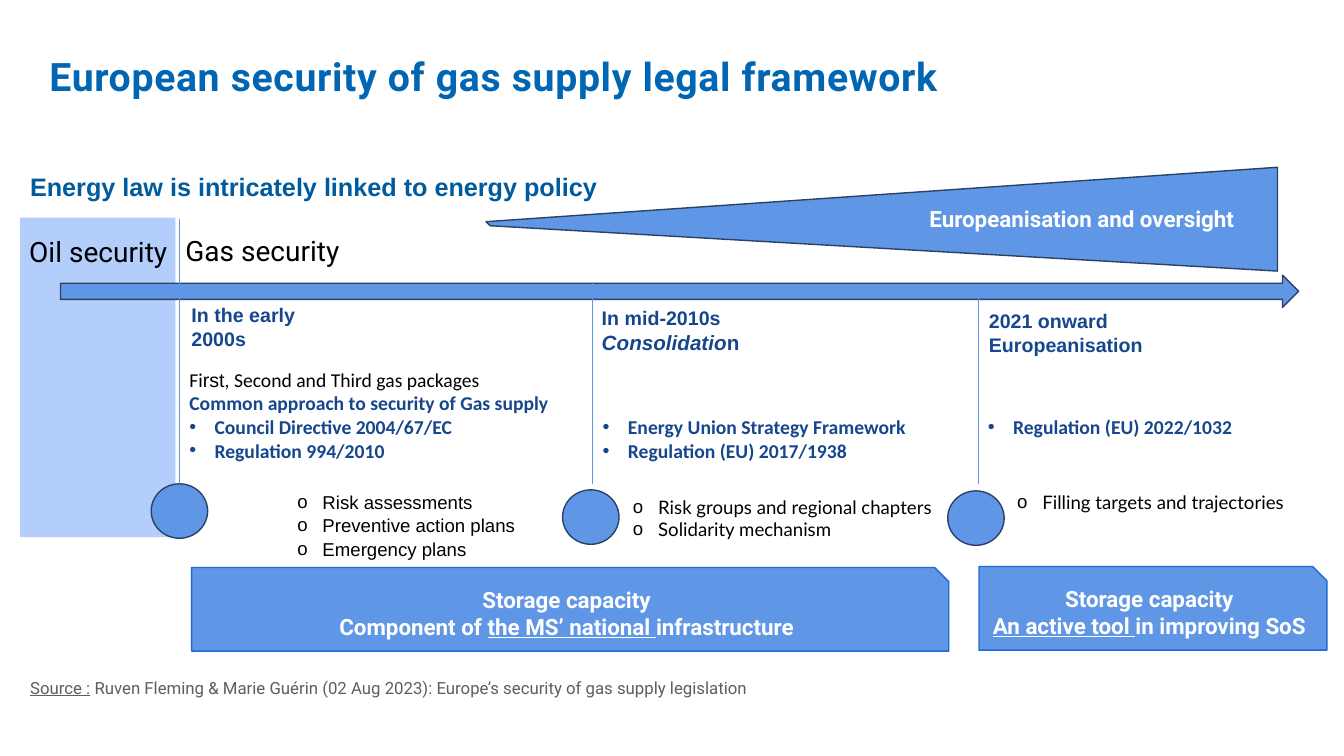
from lxml import etree
from pptx import Presentation
from pptx.dml.color import RGBColor
from pptx.enum.shapes import MSO_CONNECTOR, MSO_SHAPE
from pptx.enum.text import MSO_ANCHOR, MSO_AUTO_SIZE, PP_ALIGN
from pptx.oxml.ns import qn
from pptx.util import Inches, Pt

# Theme: colours, and text styles as (font, size, colour, bold)
COLOR = dict(fill="6096E6", edge="2A4265", box_edge="2169D3", era="4285F4")
STYLE = dict(
    title=("Roboto", 28, "0066B3", True),
    subtitle=("Arial", 18, "005B9E", True),
    era=("Roboto", 20, "000000", False),
    head=("Arial", 14, "16468D", True),
    head_italic=("Arial", 14.7, "16468D", True),
    law=("Calibri", 14, "16468D", True),
    intro=("Calibri", 14, "000000", False),
    intro_alt=("Arial", 14, "000000", False),
    tool=("Lato", 13.3, "000000", False),
    tool_alt=("Arial", 13.3, "000000", False),
    box=("Roboto", 16, "FFFFFF", True),
    source=("Roboto", 12, "5E5E5E", False),
)

# Content: a paragraph is a string or a list of (text, style, marks), marks "i" / "u"
TITLE = "European security of gas supply legal framework"
SUBTITLE = "Energy law is intricately linked to energy policy"
WEDGE_LABEL = "Europeanisation and oversight"
SOURCE = [("Source :", "source", "u"),
          (" Ruven Fleming & Marie Guérin (02 Aug 2023): "
           "Europe’s security of gas supply legislation", "source", "")]
STAGES = [
    dict(head=["In the early 2000s"],
         intro=[[("Fi", "intro", ""), ("rst", "intro_alt", ""),
                 (", Second and Third gas packages", "intro", "")],
                "Common approach to security of Gas supply"],
         laws=["Council Directive 2004/67/EC", "Regulation 994/2010"],
         tools=["Risk assessments", "Preventive action plans", "Emergency plans"],
         tool_style="tool_alt"),
    dict(head=["In mid-2010s",
               [("Consolidatio", "head_italic", "i"), ("n", "head_italic", "")]],
         intro=[],
         laws=["Energy Union Strategy Framework", "Regulation (EU) 2017/1938"],
         tools=["Risk groups and regional chapters", "Solidarity mechanism"],
         tool_style="tool"),
    dict(head=["2021 onward", "Europeanisation"],
         intro=[],
         laws=["Regulation (EU) 2022/1032"],
         tools=["Filling targets and trajectories"],
         tool_style="tool"),
]
STORAGE = [
    ["Storage capacity",
     [("Component of ", "box", ""), ("the MS’ national ", "box", "u"),
      ("infrastructure", "box", "")]],
    ["Storage capacity",
     [("An active tool ", "box", "u"), ("in improving SoS", "box", "")]],
]

# Layout in inches: one column per stage, shared rows
COLUMNS = [1.78, 5.88, 9.7]
HEAD_AT = [(1.8, 1.59), (5.87, 3.47), (9.71, 3.47)]
HEAD_TOP, HEAD_STEP = 2.94, 0.03
LAW_TOP, LAW_ROW, LAW_W = 4.07, 0.235, 3.83
LINE_TOPS, LINE_END = [2.17, 2.8, 2.82], 4.8
DOTS, DOT_SIZE = [(1.5, 4.8), (5.58, 4.86), (9.4, 4.87)], (0.56, 0.54)
TOOL_AT = [(2.85, 4.81, 2.69), (6.18, 4.87, 3.34), (9.99, 4.82, 3.34)]
STORAGE_AT = [(1.9, 5.63, 7.51, 0.83), (9.71, 5.62, 3.45, 0.83)]
WEDGE = [(12.67, 1.66), (12.67, 2.69), (4.86, 2.24), (4.82, 2.2)]

prs = Presentation()
prs.slide_width, prs.slide_height = Inches(13.33), Inches(7.5)
slide = prs.slides.add_slide(prs.slide_layouts[5])
shapes = slide.shapes


def rgb(value):
    return RGBColor.from_string(value)


def write(tf, paragraphs, style, align=PP_ALIGN.LEFT, bullet=None, start=0, spacing=1.0):
    """Fill a text frame; paragraphs from index start on carry the bullet."""
    for i, para in enumerate(paragraphs):
        p = tf.paragraphs[0] if i == 0 else tf.add_paragraph()
        p.alignment, p.line_spacing = align, spacing
        if bullet and i >= start:
            pPr = p._p.get_or_add_pPr()
            pPr.set("marL", str(Inches(0.25)))
            pPr.set("indent", str(-Inches(0.25)))
            etree.SubElement(pPr, qn("a:buFont")).set("typeface", "Arial")
            etree.SubElement(pPr, qn("a:buChar")).set("char", bullet)
        for text, name, marks in [(para, style, "")] if isinstance(para, str) else para:
            r = p.add_run()
            r.text = text
            font, size, color, bold = STYLE[name]
            r.font.name, r.font.size, r.font.bold = font, Pt(size), bold
            r.font.color.rgb = rgb(color)
            if "i" in marks:
                r.font.italic = True
            if "u" in marks:
                r.font.underline = True


def add_text(x, y, w, h, paragraphs, style, **options):
    tf = shapes.add_textbox(*map(Inches, (x, y, w, h))).text_frame
    tf.word_wrap = True
    write(tf, paragraphs, style, **options)


def paint(sp, fill=COLOR["fill"], edge=COLOR["edge"]):
    sp.shadow.inherit = False
    sp.fill.solid()
    sp.fill.fore_color.rgb = rgb(fill)
    if edge:
        sp.line.color.rgb, sp.line.width = rgb(edge), Pt(1)
    else:
        sp.line.fill.background()


def add_box(kind, x, y, w, h, **colors):
    sp = shapes.add_shape(kind, *map(Inches, (x, y, w, h)))
    paint(sp, **colors)
    return sp


# Oil era panel
panel = add_box(MSO_SHAPE.ROUNDED_RECTANGLE, 0.2, 2.16, 1.54, 3.17,
                fill=COLOR["era"], edge=None)
panel.adjustments[0] = 0
panel_color = panel.fill._xPr.find(qn("a:solidFill"))[0]
etree.SubElement(panel_color, qn("a:alpha")).set("val", "40000")

# Title and subtitle
title = shapes.title
title.left, title.top, title.width, title.height = map(Inches, (0.39, 0.42, 12.42, 0.84))
tf = title.text_frame
tf.auto_size, tf.vertical_anchor, tf.word_wrap = MSO_AUTO_SIZE.NONE, MSO_ANCHOR.TOP, True
tf.margin_left = tf.margin_right = tf.margin_top = tf.margin_bottom = Inches(0.1)
write(tf, [TITLE], "title")
tf.paragraphs[0].runs[0].font._element.set("spc", "50")
add_text(0.2, 1.65, 6.1, 0.4, [SUBTITLE], "subtitle")

# Time arrow and era labels
add_box(MSO_SHAPE.RIGHT_ARROW, 0.6, 2.73, 12.28, 0.32)
add_text(0.05, 2.28, 1.85, 0.44, ["Oil security"], "era", align=PP_ALIGN.CENTER)
add_text(1.74, 2.27, 1.82, 0.44, ["Gas security"], "era")

# Stages: dot, divider, heading, laws and tools
for i, stage in enumerate(STAGES):
    x = COLUMNS[i]
    add_box(MSO_SHAPE.OVAL, *DOTS[i], *DOT_SIZE)
    divider = shapes.add_connector(MSO_CONNECTOR.STRAIGHT, *map(
        Inches, (x, LINE_TOPS[i], x, LINE_END)))
    divider.line.color.rgb, divider.line.width = rgb(COLOR["fill"]), Pt(0.5)
    etree.SubElement(divider._element.spPr, qn("a:effectLst"))

    head_x, head_w = HEAD_AT[i]
    add_text(head_x, HEAD_TOP + HEAD_STEP * i, head_w, 0.57, stage["head"], "head",
             spacing=1.05)
    intro, laws = stage["intro"], stage["laws"]
    add_text(x, LAW_TOP - LAW_ROW * len(intro), LAW_W,
             LAW_ROW * len(intro + laws) + 0.1, intro + laws, "law",
             bullet="•", start=len(intro))
    tool_x, tool_y, tool_w = TOOL_AT[i]
    add_text(tool_x, tool_y, tool_w, 0.22 * len(stage["tools"]) + 0.1, stage["tools"],
             stage["tool_style"], bullet="o",
             spacing=1.05 if stage["tool_style"] == "tool_alt" else 1.0)

# Storage boxes
for place, lines in zip(STORAGE_AT, STORAGE):
    sp = add_box(MSO_SHAPE.SNIP_1_RECTANGLE, *place, edge=COLOR["box_edge"])
    sp.adjustments[0] = 0.17
    sp.text_frame.word_wrap = True
    sp.text_frame.vertical_anchor = MSO_ANCHOR.MIDDLE
    write(sp.text_frame, lines, "box", align=PP_ALIGN.CENTER)

# Growing wedge
points = [(Inches(x), Inches(y)) for x, y in WEDGE]
builder = shapes.build_freeform(*points[0])
builder.add_line_segments(points[1:], close=True)
paint(builder.convert_to_shape())
add_text(9.12, 1.99, 3.51, 0.37, [WEDGE_LABEL], "box")

# Source line
add_text(0.2, 6.67, 7.51, 0.3, [SOURCE], "source")

prs.save("out.pptx")
